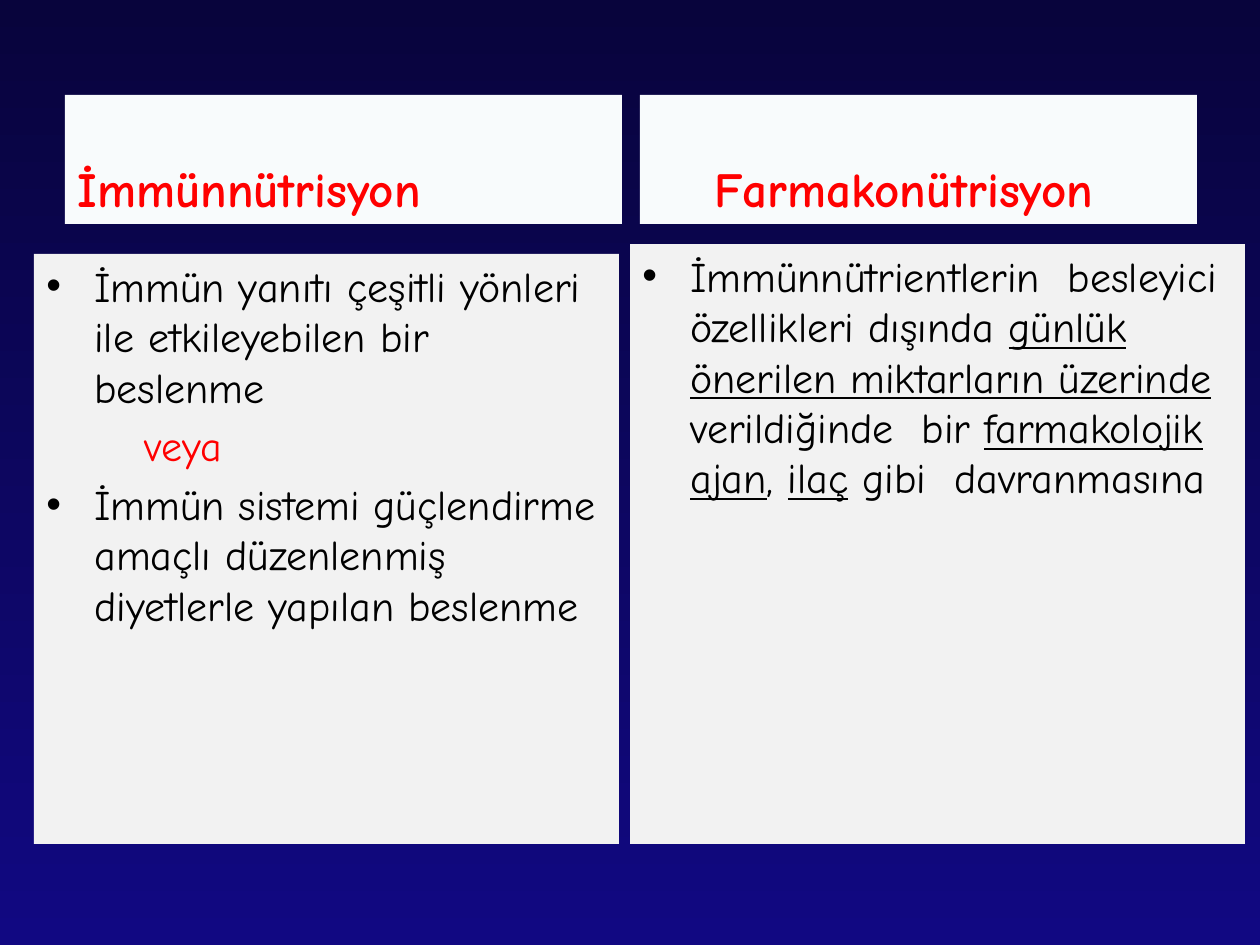
from pptx import Presentation
from pptx import util as u
from pptx.dml.color import RGBColor
from pptx.enum import shapes, text
from lxml import etree
from pptx.oxml.ns import qn

PX = 914400 // 126
FONT = "Comic Neue"
HUES = {"top": "08043C", "base": "110882", "head": "F8FBFC",
        "body": "F2F2F2", "red": "FF0000", "ink": "000000"}


def hue(name):
    return RGBColor.from_string(HUES[name])


def paint(slide):
    fill = slide.background.fill
    fill.gradient()
    fill.gradient_angle = 270
    for stop, name in zip(fill.gradient_stops, ("top", "base")):
        stop.color.rgb = hue(name)


def panel(slide, box, fill, anchor):
    shape = slide.shapes.add_shape(shapes.MSO_SHAPE.RECTANGLE,
                                   *(n * PX for n in box))
    shape.shadow.inherit = False
    shape.fill.solid()
    shape.fill.fore_color.rgb = hue(fill)
    shape.line.fill.background()
    frame = shape.text_frame
    frame.word_wrap = True
    frame.vertical_anchor = anchor
    return frame


def indent(para, left, hang=0):
    props = para._p.get_or_add_pPr()
    props.set("marL", str(left * PX))
    props.set("indent", str(-hang * PX))
    return props


def bullet(para):
    props = indent(para, 48, 48)
    etree.SubElement(props, qn("a:buFont")).set("typeface", "Arial")
    etree.SubElement(props, qn("a:buChar")).set("char", "•")


def style(para, size, color, bold=False):
    para.alignment = text.PP_ALIGN.LEFT
    for run in para.runs:
        run.font.name = FONT
        run.font.size = u.Pt(size)
        run.font.bold = bold
        run.font.color.rgb = hue(color)


def heading(slide, left, words, inset):
    frame = panel(slide, (left, 95, 557, 129), "head", text.MSO_ANCHOR.BOTTOM)
    frame.text = words
    para = frame.paragraphs[0]
    indent(para, inset)
    style(para, 28, "red", True)


def column(slide, box, items):
    frame = panel(slide, box, "body", text.MSO_ANCHOR.TOP)
    for i, (parts, listed) in enumerate(items):
        para = frame.add_paragraph() if i else frame.paragraphs[0]
        if i:
            para.space_before = u.Pt(4.8)
        if listed:
            bullet(para)
        else:
            indent(para, 98)
        for j, part in enumerate(parts):
            run = para.add_run()
            run.text = part
            run.font.underline = j % 2 == 1
        style(para, 24, "ink" if listed else "red")


def main():
    deck = Presentation()
    deck.slide_width, deck.slide_height = u.Inches(10), u.Inches(7.5)
    slide = deck.slides.add_slide(deck.slide_layouts[6])
    paint(slide)
    heading(slide, 65, "İmmünnütrisyon", 0)
    column(slide, (34, 254, 585, 590), [
        (["İmmün yanıtı çeşitli yönleri ile etkileyebilen bir beslenme"], True),
        (["veya"], False),
        (["İmmün sistemi güçlendirme amaçlı düzenlenmiş diyetlerle "
          "yapılan beslenme"], True),
    ])
    heading(slide, 640, "Farmakonütrisyon", 62)
    column(slide, (630, 244, 615, 600), [
        (["İmmünnütrientlerin  besleyici özellikleri dışında ",
          "günlük önerilen miktarların üzerinde",
          " verildiğinde  bir ", "farmakolojik ajan", ", ", "ilaç",
          " gibi  davranmasına"], True),
    ])
    deck.save("out.pptx")


if __name__ == "__main__":
    main()
